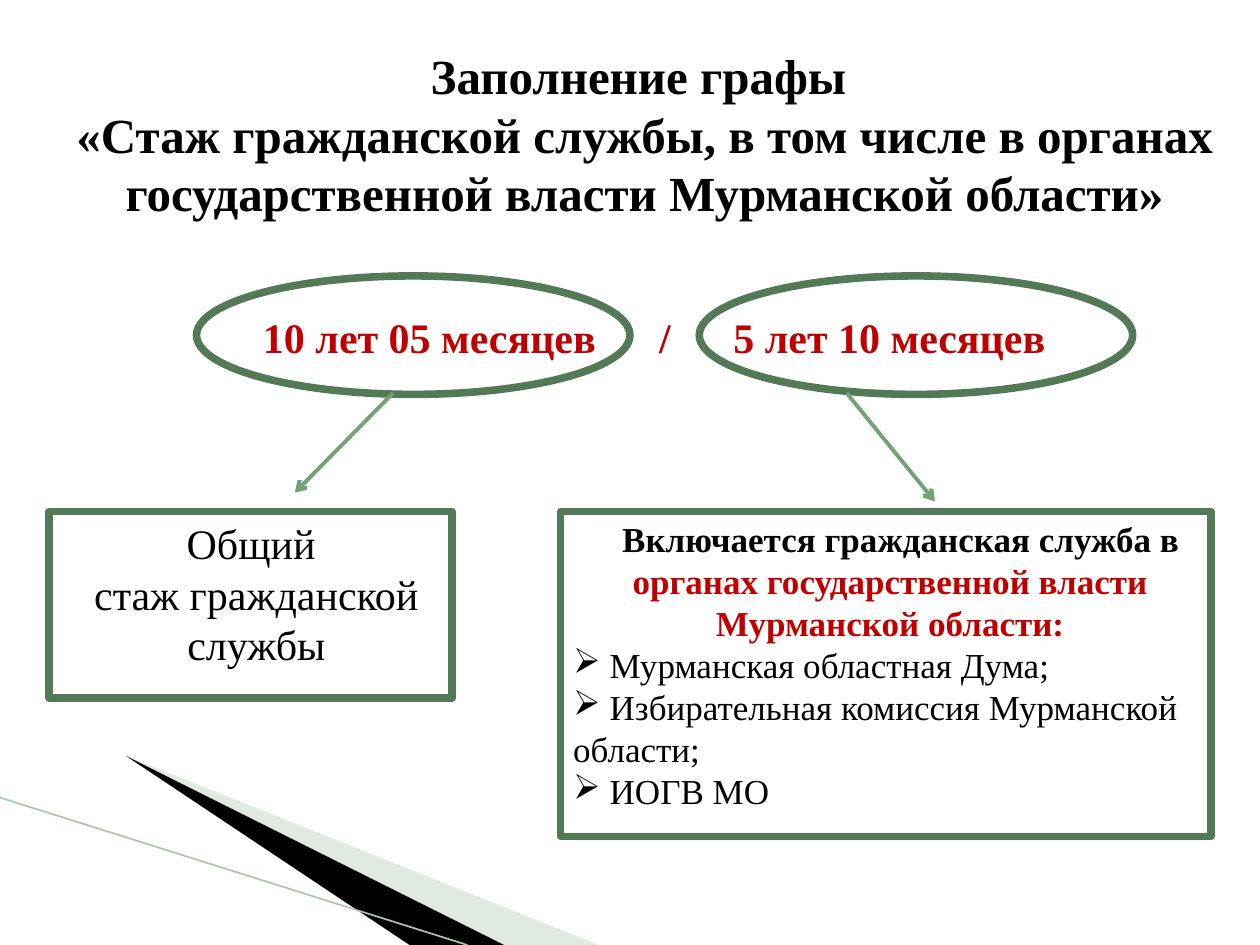
import lxml.etree
import pptx
import pptx.dml.color
import pptx.enum.shapes
import pptx.enum.text
import pptx.oxml.ns
import pptx.util

RGBColor = pptx.dml.color.RGBColor
BLACK = RGBColor(0x00, 0x00, 0x00)
RED = RGBColor(0xC0, 0x00, 0x00)
FRAME = RGBColor(0x54, 0x79, 0x57)
ARROW = RGBColor(0x72, 0xA3, 0x76)
PALE = RGBColor(0xB3, 0xCB, 0xB5)
EDGE = RGBColor(0xAC, 0xC6, 0xAE)

WIDTH, HEIGHT = 10, 7.5
OVAL_TOP, OVAL_HEIGHT = 2.19, 0.94
BOX_TOP = 4.06
SERIF = "Times New Roman"
CENTER = pptx.enum.text.PP_ALIGN.CENTER
LEFT = pptx.enum.text.PP_ALIGN.LEFT
SHAPE = pptx.enum.shapes.MSO_SHAPE

TITLE = dict(name=SERIF, size=28, bold=True, color=BLACK)
TERM = dict(name=SERIF, size=24, bold=True, color=RED)
BODY = dict(name=SERIF, size=24, bold=False, color=BLACK)
ITEM = dict(BODY, size=20)
LEAD = dict(ITEM, bold=True)
ACCENT = dict(LEAD, color=RED)

TEXTS = [
    dict(place=(0.39, 0.31, 9.45, 1.51), paragraphs=[
        dict(runs=[("Заполнение графы ", TITLE)]),
        dict(runs=[("«Стаж гражданской службы, в том числе в органах "
                    "государственной власти Мурманской области»", TITLE)]),
    ]),
    dict(place=(1.56, 2.42, 7.27, 0.5), paragraphs=[
        dict(runs=[("\t10 лет 05 месяцев\t/\t5 лет 10 месяцев", TERM)],
             align=LEFT, tabs=(1.75, 3.62, 5.4)),
    ]),
    dict(place=(0.47, BOX_TOP, 3.13, 1.31), paragraphs=[
        dict(runs=[("Общий ", BODY)]),
        dict(runs=[("стаж гражданской службы", BODY)]),
    ]),
    dict(place=(4.45, BOX_TOP, 5.23, 2.46), paragraphs=[
        dict(runs=[(" ", dict(ITEM, name="Courier New")),
                   ("Включается гражданская служба в ", LEAD),
                   ("органах государственной власти Мурманской области:", ACCENT)]),
    ] + [
        dict(runs=[(" " + body, ITEM)], align=LEFT, bullet="➢")
        for body in ("Мурманская областная Дума;",
                     "Избирательная комиссия Мурманской области;",
                     "ИОГВ МО")
    ]),
]

FRAMES = [(SHAPE.OVAL, (left, OVAL_TOP, 3.44, OVAL_HEIGHT)) for left in (1.56, 5.55)] + [
    (SHAPE.RECTANGLE, (0.39, BOX_TOP, 3.2, 1.48)),
    (SHAPE.RECTANGLE, (4.45, BOX_TOP, 5.16, 2.58)),
]
ARROWS = [((3.12, 3.12), (2.34, 3.91)), ((6.72, 3.12), (7.42, 3.98))]
WEDGES = [
    (PALE, 40, [(0.55, 6.5), (5.95, HEIGHT), (4.56, HEIGHT)]),
    (BLACK, 100, [(0.53, 6.49), (4.57, HEIGHT), (3.72, HEIGHT)]),
]


def inches(lengths):
    return [pptx.util.Inches(length) for length in lengths]


def add_element(parent, tag, **attributes):
    return lxml.etree.SubElement(parent, pptx.oxml.ns.qn(tag), attributes)


def add_wedge(slide, color, opacity, corners):
    builder = slide.shapes.build_freeform(*corners[0], scale=pptx.util.Inches(1))
    builder.add_line_segments(corners[1:], close=True)
    wedge = builder.convert_to_shape()
    wedge.shadow.inherit = False
    wedge.fill.solid()
    wedge.fill.fore_color.rgb = color
    wedge.line.fill.background()
    if opacity < 100:
        tint = wedge.fill._xPr.find(".//" + pptx.oxml.ns.qn("a:srgbClr"))
        add_element(tint, "a:alpha", val=str(opacity * 1000))


def add_line(slide, start, end, color, width, arrow=False):
    line = slide.shapes.add_connector(
        pptx.enum.shapes.MSO_CONNECTOR.STRAIGHT, *inches(start + end))
    line.line.color.rgb = color
    line.line.width = pptx.util.Pt(width)
    if arrow:
        add_element(line.line._get_or_add_ln(), "a:tailEnd", type="arrow")
    add_element(line._element.spPr, "a:effectLst")


def add_frame(slide, kind, place):
    frame = slide.shapes.add_shape(kind, *inches(place))
    frame.shadow.inherit = False
    frame.fill.background()
    frame.line.color.rgb = FRAME
    frame.line.width = pptx.util.Pt(4.33)


def add_run(paragraph, words, style):
    run = paragraph.add_run()
    run.text = words
    values = dict(style, size=pptx.util.Pt(style["size"]))
    run.font.color.rgb = values.pop("color")
    for key, value in values.items():
        setattr(run.font, key, value)


def add_text(slide, place, paragraphs):
    frame = slide.shapes.add_textbox(*inches(place)).text_frame
    frame.word_wrap = True
    for index, content in enumerate(paragraphs):
        paragraph = frame.add_paragraph() if index else frame.paragraphs[0]
        paragraph.alignment = content.get("align", CENTER)
        properties = paragraph._p.get_or_add_pPr()
        if "bullet" in content:
            add_element(properties, "a:buChar", char=content["bullet"])
        if "tabs" in content:
            stops = add_element(properties, "a:tabLst")
            for position in content["tabs"]:
                add_element(stops, "a:tab", pos=str(pptx.util.Inches(position)), algn="ctr")
        for words, style in content["runs"]:
            add_run(paragraph, words, style)


def main():
    deck = pptx.Presentation()
    deck.slide_width, deck.slide_height = inches((WIDTH, HEIGHT))
    slide = deck.slides.add_slide(deck.slide_layouts[6])
    for wedge in WEDGES:
        add_wedge(slide, *wedge)
    add_line(slide, (0, 6.33), (3.71, HEIGHT), EDGE, 0.95)
    for text in TEXTS:
        add_text(slide, **text)
    for frame in FRAMES:
        add_frame(slide, *frame)
    for start, end in ARROWS:
        add_line(slide, start, end, ARROW, 2.25, arrow=True)
    deck.save("out.pptx")


if __name__ == "__main__":
    main()
